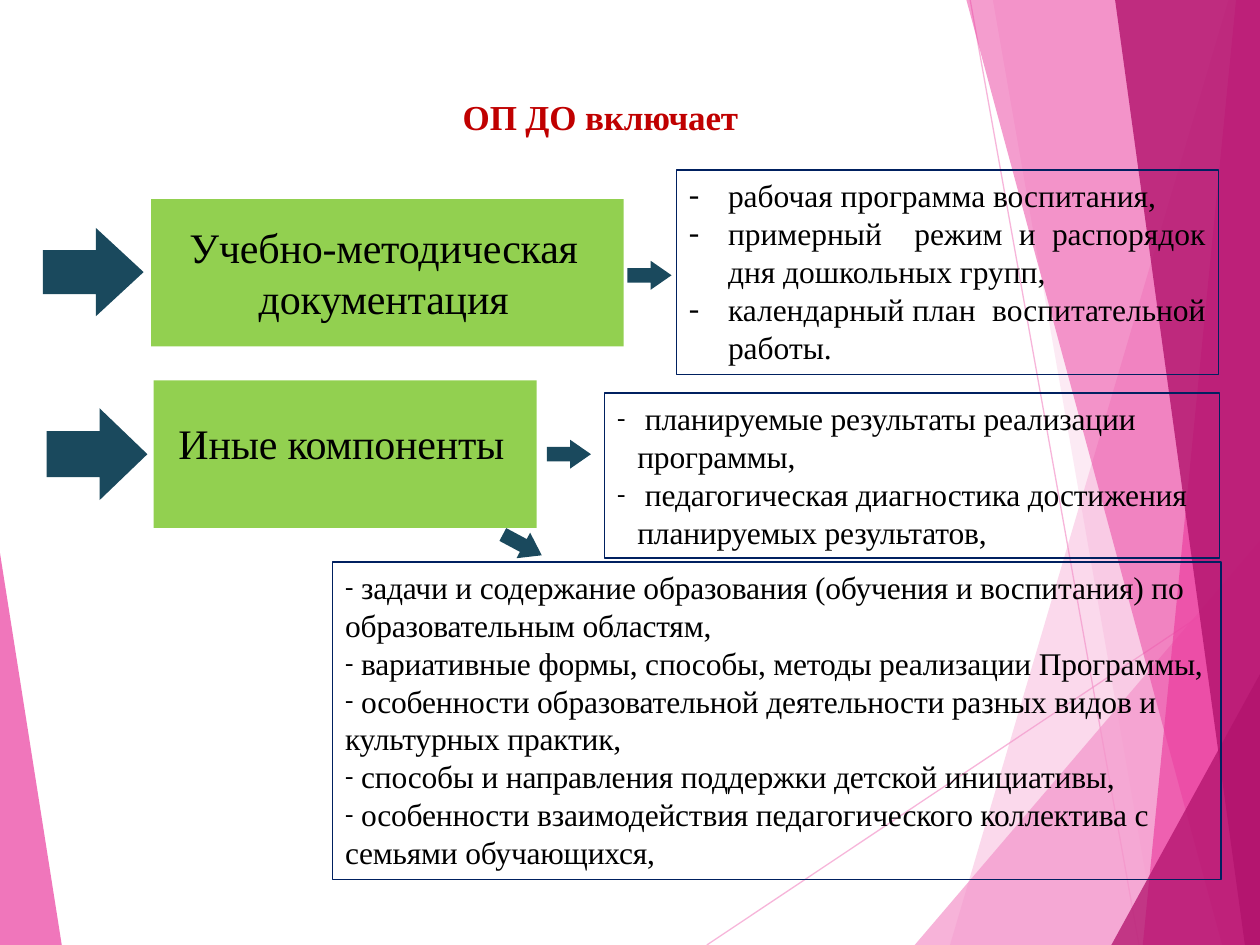
from lxml import etree
from pptx import Presentation
from pptx.dml.color import RGBColor
from pptx.enum.shapes import MSO_CONNECTOR, MSO_SHAPE
from pptx.enum.text import MSO_ANCHOR, PP_ALIGN
from pptx.oxml.ns import qn
from pptx.util import Inches, Pt

RECT, ARROW = MSO_SHAPE.RECTANGLE, MSO_SHAPE.RIGHT_ARROW
STRAIGHT = MSO_CONNECTOR.STRAIGHT
TOP = MSO_ANCHOR.TOP
LEFT, CENTER, JUSTIFY = PP_ALIGN.LEFT, PP_ALIGN.CENTER, PP_ALIGN.JUSTIFY

FONT = "Times New Roman"
COLORS = {
    "light": "F496CB", "pink": "EB3D9F", "plum": "B2136D", "title": "C00000",
    "green": "92D050", "arrow": "1A495D", "border": "002060", "text": "000000",
}

# Background facets: corner points, colour, opacity in percent
FACETS = [
    ([(9.75, 0), (7.54, 7.5), (10, 7.5), (10, 0)], "light", 36),
    ([(7.88, 0), (9.19, 7.5), (10, 7.5), (10, 0)], "light", 20),
    ([(7.26, 7.5), (10, 4.29), (10, 7.5)], "light", 72),
    ([(7.67, 0), (9.7, 7.5), (10, 7.5), (10, 0)], "pink", 50),
    ([(9.81, 0), (9.07, 7.5), (10, 7.5), (10, 0)], "pink", 66),
    ([(8.85, 0), (9.88, 7.5), (10, 7.5), (10, 0)], "plum", 80),
    ([(8.82, 7.5), (10, 5.35), (10, 7.5)], "plum", 76),
    ([(0, 4.39), (0.49, 7.5), (0, 7.5)], "pink", 70),
]

PROGRAMMES = [
    "рабочая программа воспитания, ",
    "примерный  режим и распорядок дня дошкольных групп, ",
    "календарный план  воспитательной работы. ",
]
RESULTS = [
    " планируемые результаты реализации программы,",
    " педагогическая диагностика достижения планируемых результатов,",
]
CONTENT = [
    " задачи и содержание образования (обучения и воспитания) по  образовательным областям,",
    " вариативные формы, способы, методы реализации Программы,",
    " особенности образовательной деятельности разных видов и  культурных практик,",
    " способы и направления поддержки детской инициативы,",
    " особенности взаимодействия педагогического коллектива с  семьями обучающихся,",
]


def rgb(name):
    return RGBColor.from_string(COLORS[name])


def set_opacity(shape, percent):
    for color in shape._element.spPr.iter(qn("a:srgbClr")):
        etree.SubElement(color, qn("a:alpha"), val=str(percent * 1000))


def place(shape, x, y, w, h):
    shape.left, shape.top, shape.width, shape.height = map(Inches, (x, y, w, h))


def paint(shape, color):
    shape.shadow.inherit = False
    shape.fill.solid()
    shape.fill.fore_color.rgb = rgb(color)
    shape.line.fill.background()


def add_ray(s, x1, y1, x2, y2):
    line = s.shapes.add_connector(STRAIGHT, *map(Inches, (x1, y1, x2, y2)))
    line.line.color.rgb = rgb("light")
    line.line.width = Pt(0.75)
    set_opacity(line, 70)
    etree.SubElement(line._element.spPr, qn("a:effectLst"))


def add_facet(s, points, color, opacity):
    corners = [(Inches(x), Inches(y)) for x, y in points]
    builder = s.shapes.build_freeform(*corners[0])
    builder.add_line_segments(corners[1:], close=True)
    facet = builder.convert_to_shape()
    paint(facet, color)
    set_opacity(facet, opacity)


def add_block(s, x, y, w, h):
    paint(s.shapes.add_shape(RECT, *map(Inches, (x, y, w, h))), "green")


def add_arrow(s, x, y, w, h, head, rotation=0):
    arrow = s.shapes.add_shape(ARROW, *map(Inches, (x, y, w, h)))
    arrow.adjustments[1] = head
    arrow.rotation = rotation
    paint(arrow, "arrow")


def write(p, text, size, color="text", bold=False, align=LEFT, spacing=-0.1):
    p.alignment = align
    r = p.add_run()
    r.text = text
    r.font.name, r.font.size, r.font.bold = FONT, Pt(size), bold
    r.font.color.rgb = rgb(color)
    r._r.get_or_add_rPr().set("spc", str(round(spacing * 100)))


def write_heading(shape, text, size, **fmt):
    tf = shape.text_frame
    tf.word_wrap = True
    tf.vertical_anchor = TOP
    tf.margin_left = tf.margin_right = tf.margin_bottom = 0
    tf.margin_top = Inches(0.01)
    p = tf.paragraphs[0]
    p.space_before = Pt(1)
    write(p, text, size, align=CENTER, **fmt)


def add_label(s, x, y, w, h, text):
    write_heading(s.shapes.add_textbox(*map(Inches, (x, y, w, h))), text, 24)


def set_bullet(p, indent, size):
    pPr = p._p.get_or_add_pPr()
    pPr.set("marL", str(Inches(indent)))
    pPr.set("indent", str(-Inches(indent)))
    etree.SubElement(pPr, qn("a:buSzPct"), val=str(size * 1000))
    etree.SubElement(pPr, qn("a:buFont"), typeface=FONT)
    etree.SubElement(pPr, qn("a:buChar"), char="-")


def add_list_box(s, x, y, w, h, items, indent=0, bullet_size=80, **fmt):
    box = s.shapes.add_shape(RECT, *map(Inches, (x, y, w, h)))
    box.shadow.inherit = False
    box.fill.background()
    box.line.color.rgb = rgb("border")
    box.line.width = Pt(0.75)
    tf = box.text_frame
    tf.word_wrap = True
    tf.vertical_anchor = TOP
    for i, item in enumerate(items):
        p = tf.add_paragraph() if i else tf.paragraphs[0]
        write(p, item, 18, **fmt)
        set_bullet(p, indent, bullet_size)


def main():
    prs = Presentation()
    prs.slide_width, prs.slide_height = Inches(10), Inches(7.5)
    s = prs.slides.add_slide(prs.slide_layouts[5])

    # Background
    add_ray(s, 5.61, 7.5, 10, 4.57)
    add_ray(s, 7.7, 0, 9.04, 7.5)
    for facet in FACETS:
        add_facet(s, *facet)

    # Title
    title = s.shapes.title
    place(title, 1.73, 0.75, 6.07, 0.35)
    write_heading(title, "ОП ДО включает", 20, color="title", bold=True)

    # Green blocks with their labels
    add_block(s, 1.2, 1.58, 3.75, 1.17)
    add_block(s, 1.22, 3.02, 3.04, 1.17)
    add_label(s, 1.39, 1.75, 3.31, 0.82, "Учебно-методическая документация")
    add_label(s, 1.35, 3.3, 2.72, 0.42, "Иные компоненты")

    # Arrows into and out of the blocks
    add_arrow(s, 0.34, 1.81, 0.8, 0.7, head=0.54)
    add_arrow(s, 0.37, 3.24, 0.8, 0.73, head=0.52)
    for x, y, rotation in [(4.98, 2.07, 0), (4.34, 3.49, 0), (3.97, 4.21, 28.1)]:
        add_arrow(s, x, y, 0.35, 0.23, head=0.72, rotation=rotation)

    # Lists
    add_list_box(s, 5.37, 1.35, 4.3, 1.62, PROGRAMMES, indent=0.31,
                 bullet_size=100, align=JUSTIFY, spacing=0)
    add_list_box(s, 4.8, 3.12, 4.88, 1.31, RESULTS, indent=0.16)
    add_list_box(s, 2.64, 4.46, 7.05, 2.52, CONTENT)

    prs.save("out.pptx")


if __name__ == "__main__":
    main()
